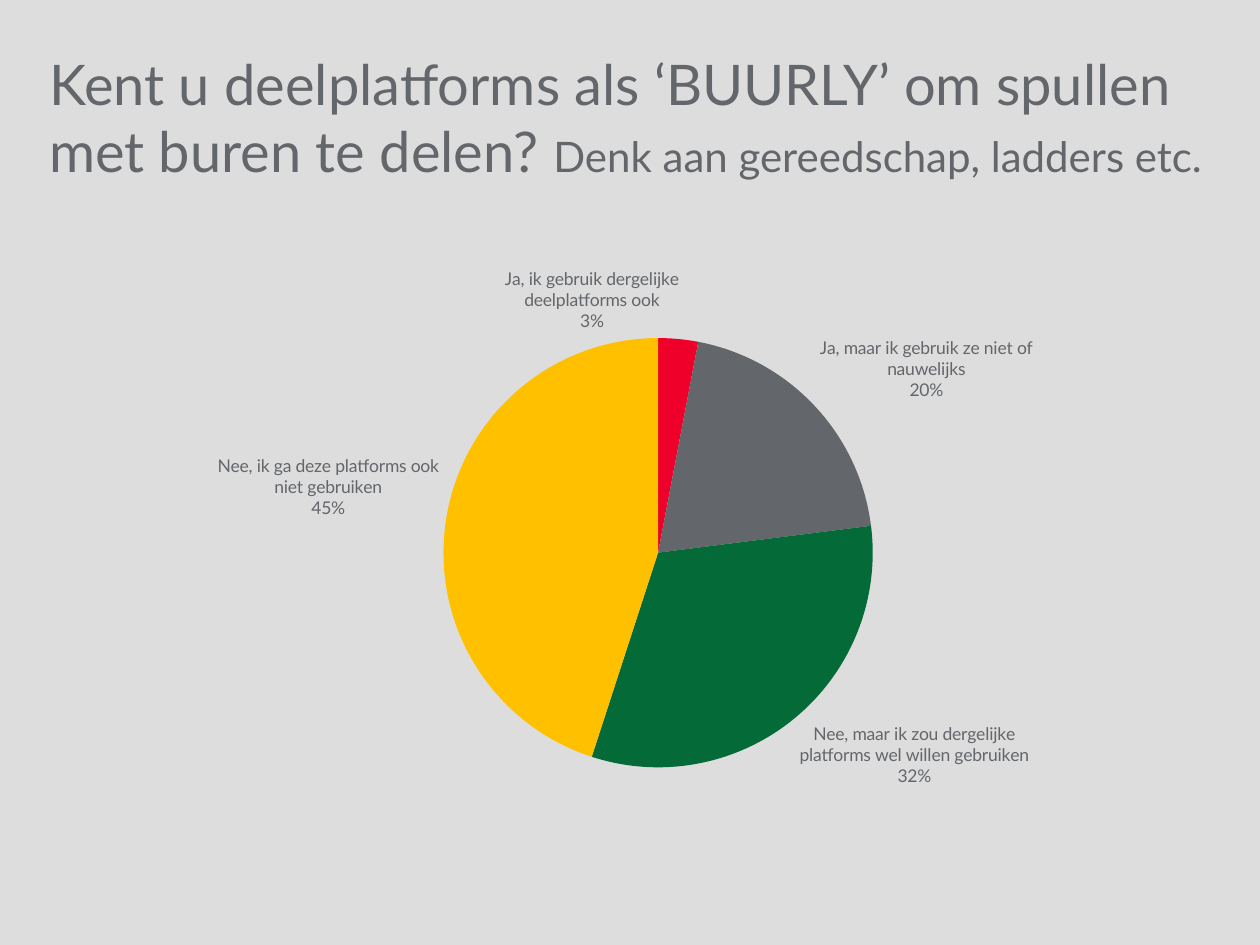
"""Build a survey slide with a title and a labelled pie chart."""
from dataclasses import dataclass

from lxml.etree import fromstring
from pptx import Presentation
from pptx.chart.chart import Chart
from pptx.chart.data import CategoryChartData
from pptx.dml.color import RGBColor
from pptx.enum.chart import XL_CHART_TYPE, XL_LABEL_POSITION
from pptx.enum.text import MSO_ANCHOR, MSO_AUTO_SIZE, PP_ALIGN
from pptx.oxml.ns import nsdecls, qn
from pptx.slide import Slide
from pptx.util import Pt

BACKGROUND = RGBColor(0xDD, 0xDD, 0xDD)
GREY = RGBColor(0x63, 0x66, 0x6A)
RED = RGBColor(0xEF, 0x00, 0x2B)
GREEN = RGBColor(0x04, 0x6A, 0x38)
YELLOW = RGBColor(0xFF, 0xC0, 0x00)
FONT = "Lato"
LEFT, WIDTH = Pt(28), Pt(663)


@dataclass(frozen=True)
class Answer:
    label: str
    share: float
    color: RGBColor


@dataclass(frozen=True)
class TitlePart:
    text: str
    size: int


ANSWERS = [
    Answer("Ja, ik gebruik dergelijke deelplatforms ook", 0.03, RED),
    Answer("Ja, maar ik gebruik ze niet of nauwelijks", 0.20, GREY),
    Answer("Nee, maar ik zou dergelijke platforms wel willen gebruiken", 0.32, GREEN),
    Answer("Nee, ik ga deze platforms ook niet gebruiken", 0.45, YELLOW),
]
TITLE_PARTS = [
    TitlePart("Kent u deelplatforms als ‘BUURLY’ om spullen met buren te delen? ", 32),
    TitlePart("Denk aan gereedschap, ladders etc.", 24),
]


def add_title(slide: Slide, parts: list[TitlePart]) -> None:
    title = slide.shapes.title
    title.left, title.top, title.width, title.height = LEFT, Pt(28), WIDTH, Pt(85)
    frame = title.text_frame
    frame.margin_left = frame.margin_right = frame.margin_top = frame.margin_bottom = 0
    frame.vertical_anchor = MSO_ANCHOR.TOP
    frame.auto_size = MSO_AUTO_SIZE.NONE
    frame.word_wrap = True
    paragraph = frame.paragraphs[0]
    paragraph.alignment = PP_ALIGN.LEFT
    for part in parts:
        run = paragraph.add_run()
        run.text = part.text
        run.font.name = FONT
        run.font.size = Pt(part.size)
        run.font.color.rgb = GREY


def place_plot(chart: Chart) -> None:
    layout = fromstring(
        f'<c:layout {nsdecls("c")}><c:manualLayout><c:layoutTarget val="inner"/>'
        '<c:xMode val="edge"/><c:yMode val="edge"/><c:x val="0.34"/><c:y val="0.15"/>'
        '<c:w val="0.37"/><c:h val="0.72"/></c:manualLayout></c:layout>'
    )
    plot_area = chart._chartSpace.chart.plotArea
    for current in plot_area.findall(qn("c:layout")):
        plot_area.remove(current)
    plot_area.insert(0, layout)


def shift_first_label(chart: Chart) -> None:
    labels = chart.plots[0].series[0].data_labels._element
    labels.insert(0, fromstring(
        f'<c:dLbl {nsdecls("c")}><c:idx val="0"/><c:layout><c:manualLayout>'
        '<c:x val="-0.15"/><c:y val="0"/></c:manualLayout></c:layout>'
        '<c:dLblPos val="outEnd"/><c:showLegendKey val="0"/><c:showVal val="1"/>'
        '<c:showCatName val="1"/><c:showSerName val="0"/><c:showPercent val="0"/>'
        '<c:showBubbleSize val="0"/><c:separator>\n</c:separator></c:dLbl>'
    ))


def add_pie(slide: Slide, answers: list[Answer]) -> None:
    data = CategoryChartData(number_format="0%")
    data.categories = [answer.label for answer in answers]
    data.add_series("Series 1", [answer.share for answer in answers])
    chart = slide.shapes.add_chart(
        XL_CHART_TYPE.PIE, LEFT, Pt(142), WIDTH, Pt(341), data
    ).chart
    chart.has_title = False
    chart.has_legend = False
    chart.font.name = FONT
    chart.font.size = Pt(10)
    chart.font.color.rgb = GREY
    chart.plots[0].vary_by_categories = True
    series = chart.plots[0].series[0]
    for index, answer in enumerate(answers):
        slice_format = series.points[index].format
        slice_format.fill.solid()
        slice_format.fill.fore_color.rgb = answer.color
        slice_format.line.fill.background()
    labels = series.data_labels
    labels.show_value = True
    labels.show_category_name = True
    labels.number_format = "0%"
    labels.number_format_is_linked = False
    labels.position = XL_LABEL_POSITION.OUTSIDE_END
    labels.font.name = FONT
    labels.font.size = Pt(10)
    labels.font.color.rgb = GREY
    separator = fromstring(f'<c:separator {nsdecls("c")}>\n</c:separator>')
    show_bubble_size = labels._element.find(qn("c:showBubbleSize"))
    if show_bubble_size is None:
        show_bubble_size = labels._element.find(qn("c:showPercent"))
    show_bubble_size.addnext(separator)
    shift_first_label(chart)
    place_plot(chart)


def main() -> None:
    presentation = Presentation()
    presentation.slide_width, presentation.slide_height = Pt(720), Pt(540)
    slide = presentation.slides.add_slide(presentation.slide_layouts[5])
    slide.background.fill.solid()
    slide.background.fill.fore_color.rgb = BACKGROUND
    add_title(slide, TITLE_PARTS)
    add_pie(slide, ANSWERS)
    presentation.save("out.pptx")


if __name__ == "__main__":
    main()
